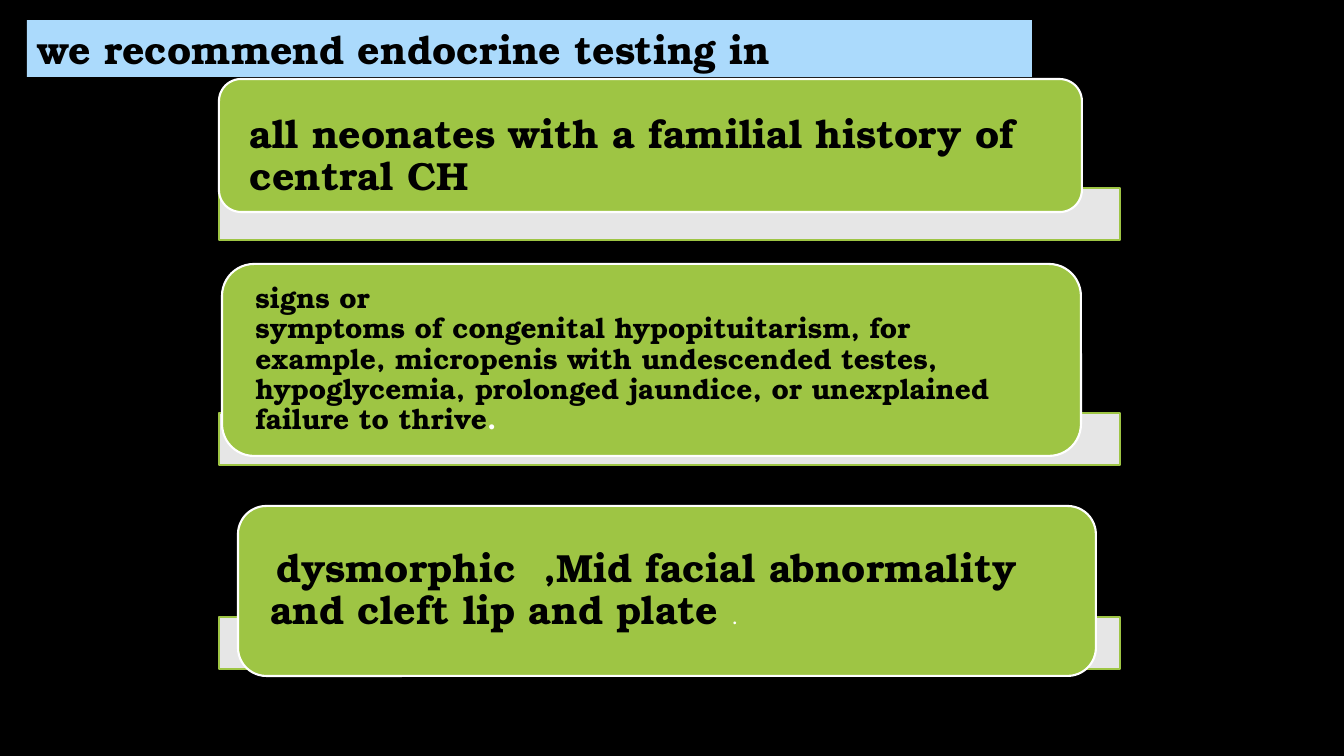
from lxml.etree import SubElement
from pptx import Presentation
from pptx.dml.color import RGBColor
from pptx.enum.shapes import MSO_SHAPE
from pptx.enum.text import MSO_ANCHOR, MSO_AUTO_SIZE, PP_ALIGN
from pptx.oxml.ns import qn
from pptx.util import Emu, Pt

SCALE = 12192000 / 1344
FACE = "TeX Gyre Bonum"
BLACK, WHITE, GREEN, BLUE = "000000", "FFFFFF", "9EC544", "ABDAFC"
BAR_LEFT, BAR_WIDE, BAR_HIGH = 219, 901, 52

# bar top, card box, space above the text, runs of (text, size, colour, bold)
ITEMS = [
    (188, (219, 79, 863, 133), 22, [
        ("all neonates with a familial history of central CH", 28, BLACK, True),
    ]),
    (413, (222, 264, 859, 192), 0, [
        ("signs or\nsymptoms of congenital hypopituitarism, for example, "
         "micropenis with undescended testes, hypoglycemia, prolonged "
         "jaundice, or unexplained failure to thrive", 20, BLACK, True),
        (".", 20, WHITE, True),
    ]),
    (617, (238, 506, 858, 170), 0, [
        (" ", 13, WHITE, False),
        ("dysmorphic  ,Mid facial abnormality and cleft lip and plate ",
         28, BLACK, True),
        (".", 16, WHITE, False),
    ]),
]


def px(n):
    return Emu(round(n * SCALE))


def rgb(code):
    return RGBColor.from_string(code)


def apply(item, form):
    for name, value in form.items():
        setattr(item, name, value)


def paint(item, code):
    item.fill.solid()
    item.fill.fore_color.rgb = rgb(code)


def draw(slide, kind, box, fill, edge):
    shape = slide.shapes.add_shape(kind, *map(px, box))
    shape.shadow.inherit = False
    paint(shape, fill)
    shape.line.color.rgb = rgb(edge)
    shape.line.width = Pt(1.5)
    return shape


def fade(shape, share):
    """Set the opacity of a solid fill, in percent."""
    tone = shape.fill._xPr.find(qn("a:solidFill"))[0]
    SubElement(tone, qn("a:alpha")).set("val", str(share * 1000))


def write(shape, runs, frame, para):
    text = shape.text_frame
    apply(text, {"word_wrap": True, "auto_size": MSO_AUTO_SIZE.NONE,
                 "vertical_anchor": MSO_ANCHOR.MIDDLE, **frame})
    first = text.paragraphs[0]
    apply(first, {"alignment": PP_ALIGN.LEFT, **para})
    for words, size, code, bold in runs:
        for row, line in enumerate(words.split("\n")):
            if row:
                first.add_line_break()
            run = first.add_run()
            run.text = line
            apply(run.font, {"name": FACE, "size": Pt(size), "bold": bold})
            run.font.color.rgb = rgb(code)


def add_title(slide, words):
    title = slide.shapes.title
    apply(title, {"left": px(27), "top": px(20),
                  "width": px(1005), "height": px(57)})
    paint(title, BLUE)
    write(title, [(words, 28, BLACK, True)], {}, {})


def add_item(slide, top, box, above, runs):
    """Draw a pale bar with a text card over it."""
    bar = draw(slide, MSO_SHAPE.RECTANGLE,
               (BAR_LEFT, top, BAR_WIDE, BAR_HIGH), WHITE, GREEN)
    fade(bar, 90)
    card = draw(slide, MSO_SHAPE.ROUNDED_RECTANGLE, box, GREEN, WHITE)
    frame = {"margin_left": px(24), "margin_right": px(24),
             "margin_top": px(above), "margin_bottom": 0}
    write(card, runs, frame, {"line_spacing": 0.9})


def main():
    deck = Presentation()
    apply(deck, {"slide_width": px(1344), "slide_height": px(756)})
    slide = deck.slides.add_slide(deck.slide_layouts[5])
    paint(slide.background, BLACK)
    add_title(slide, "we recommend endocrine testing in")
    for item in ITEMS:
        add_item(slide, *item)
    deck.save("out.pptx")


if __name__ == "__main__":
    main()
